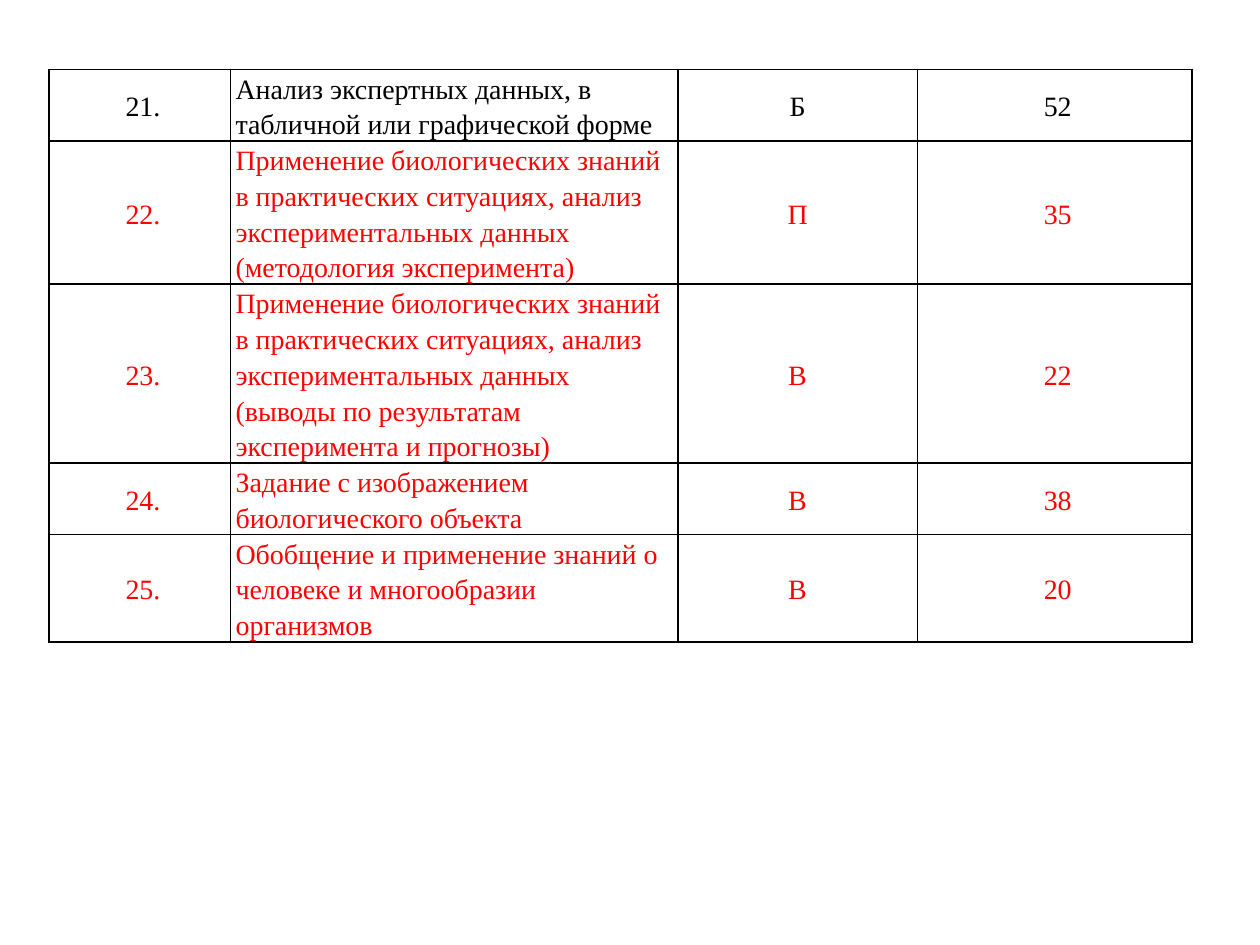
import pptx
import pptx.util
import pptx.dml.color
import pptx.enum.text
import pptx.oxml
import pptx.oxml.ns
from pptx.util import Inches

BLACK = "000000"
RED = "FF0000"
WIDTHS = [1.44, 3.55, 1.9, 2.18]
INDENTS = [0.05, 0, -0.08, 0.05]
LINE = 0.28
TASKS = [
    ("21.", "Анализ экспертных данных, в табличной или графической форме", "Б", "52", 2, BLACK),
    ("22.", "Применение биологических знаний в практических ситуациях, анализ "
     "экспериментальных данных (методология эксперимента)", "П", "35", 4, RED),
    ("23.", "Применение биологических знаний в практических ситуациях, анализ "
     "экспериментальных данных (выводы по результатам эксперимента и прогнозы)", "В", "22", 5, RED),
    ("24.", "Задание с изображением биологического объекта", "В", "38", 2, RED),
    ("25.", "Обобщение и применение знаний о человеке и многообразии организмов", "В", "20", 3, RED),
]


def tint(color):
    return pptx.dml.color.RGBColor.from_string(color)


def border(cell):
    props = cell._tc.get_or_add_tcPr()
    for side in ("lnL", "lnR", "lnT", "lnB"):
        props.append(pptx.oxml.parse_xml(
            f'<a:{side} {pptx.oxml.ns.nsdecls("a")} w="{pptx.util.Pt(1)}">'
            f'<a:solidFill><a:srgbClr val="{BLACK}"/></a:solidFill></a:{side}>'))


def fill_cell(cell, text, color, col):
    border(cell)
    cell.fill.background()
    cell.margin_left = cell.margin_right = Inches(0.04)
    cell.margin_top = cell.margin_bottom = 0
    cell.vertical_anchor = pptx.enum.text.MSO_ANCHOR.MIDDLE
    cell.text = text
    para = cell.text_frame.paragraphs[0]
    align = pptx.enum.text.PP_ALIGN
    para.alignment = align.LEFT if col == 1 else align.CENTER
    para._p.get_or_add_pPr().set("indent", str(Inches(INDENTS[col])))
    para.line_spacing = 1.15
    para.font.name = "Times New Roman"
    para.font.size = pptx.util.Pt(16)
    para.font.color.rgb = tint(color)


def add_tasks(slide, left, top, width):
    height = LINE * sum(task[4] for task in TASKS)
    table = slide.shapes.add_table(
        len(TASKS), len(WIDTHS), Inches(left), Inches(top), Inches(width), Inches(height)).table
    table.first_row = table.horz_banding = False
    for column, share in zip(table.columns, WIDTHS):
        column.width = Inches(width * share / sum(WIDTHS))
    for row, (*texts, lines, color) in zip(table.rows, TASKS):
        row.height = Inches(LINE * lines)
        for col, text in enumerate(texts):
            fill_cell(row.cells[col], text, color, col)


def main():
    deck = pptx.Presentation()
    deck.slide_width = Inches(10)
    deck.slide_height = Inches(7.5)
    slide = deck.slides.add_slide(deck.slide_layouts[6])
    add_tasks(slide, 0.39, 0.55, 9.07)
    deck.save("out.pptx")


if __name__ == "__main__":
    main()
